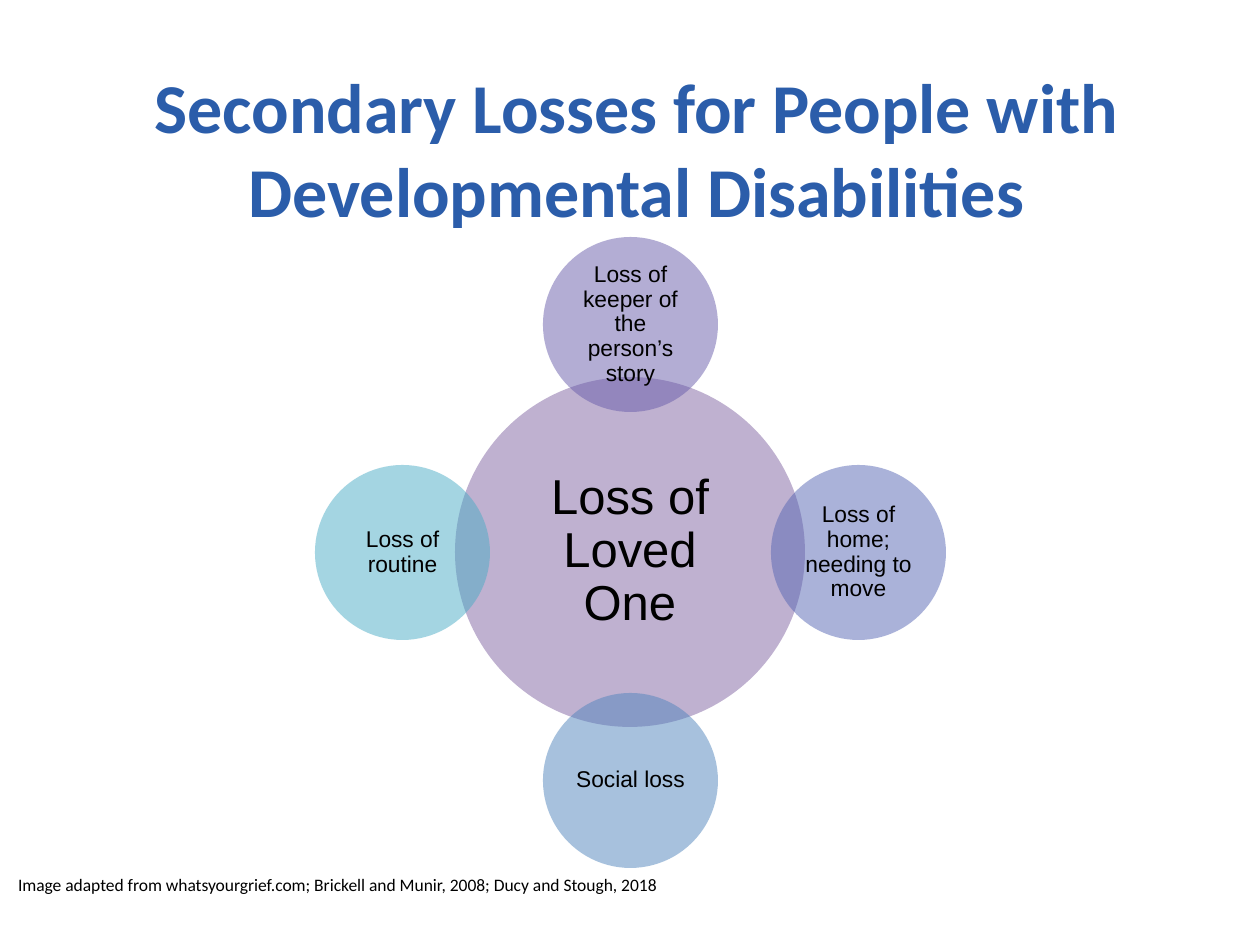
from lxml.etree import SubElement
from pptx import Presentation
from pptx.dml.color import RGBColor
from pptx.enum.shapes import MSO_SHAPE as SHAPE
from pptx.enum.text import MSO_ANCHOR as ANCHOR, MSO_AUTO_SIZE as AUTO, PP_ALIGN as ALIGN
from pptx.oxml.ns import qn
from pptx.util import Emu, Pt

PX = 914400 // 126
SLIDE_SIZE = 1260, 945
COLORS = {
    "title": "2B5DAA", "text": "000000", "loved one": "8064A2", "story": "685DAB",
    "home": "5767B4", "social": "5185BD", "routine": "4BACC6",
}
TITLE = "Secondary Losses for People with Developmental Disabilities"
SOURCE = "Image adapted from whatsyourgrief.com; Brickell and Munir, 2008; Ducy and Stough, 2018"
PRIMARY_LOSS = "Loss of Loved One"
SECONDARY_LOSSES = [  # text, color, direction from the center
    ("Loss of keeper of the person’s story", "story", (0, -1)),
    ("Loss of home; needing to move", "home", (1, 0)),
    ("Social loss", "social", (0, 1)),
    ("Loss of routine", "routine", (-1, 0)),
]
CENTER = 630, 552
PRIMARY_DIAMETER, SECONDARY_DIAMETER = 350, 175
ORBIT = 228


def emu(*lengths):
    return [Emu(length * PX) for length in lengths]


def write(shape, text, margin, frame_format, paragraph_format, font_format, color="text"):
    frame = shape.text_frame
    frame.word_wrap = True
    for side in ("left", "top", "right", "bottom"):
        setattr(frame, f"margin_{side}", Emu(margin * PX))
    paragraph = frame.paragraphs[0]
    paragraph.text = text
    font = paragraph.runs[0].font
    for target, values in ((frame, frame_format), (paragraph, paragraph_format),
                           (font, font_format)):
        for name, value in values.items():
            setattr(target, name, value)
    font.color.rgb = RGBColor.from_string(COLORS[color])


def add_loss(slide, text, color, center, diameter, size, margin):
    """Add a half-transparent circle with its text."""
    left, top = (middle - diameter // 2 for middle in center)
    circle = slide.shapes.add_shape(SHAPE.OVAL, *emu(left, top, diameter, diameter))
    circle.shadow.inherit = False
    circle.line.fill.background()
    circle.fill.solid()
    circle.fill.fore_color.rgb = RGBColor.from_string(COLORS[color])
    fill_color = circle.fill._xPr.find(qn("a:solidFill"))[0]
    SubElement(fill_color, qn("a:alpha"), val="50000")
    write(circle, text, margin, {"vertical_anchor": ANCHOR.MIDDLE},
          {"alignment": ALIGN.CENTER, "line_spacing": 0.9},
          {"name": "Arial", "size": Pt(size)})


def main():
    prs = Presentation()
    prs.slide_width, prs.slide_height = emu(*SLIDE_SIZE)
    slide = prs.slides.add_slide(prs.slide_layouts[6])

    title = slide.shapes.add_textbox(*emu(65, 58, 1143, 241))
    write(title, TITLE, 6, {"vertical_anchor": ANCHOR.TOP}, {"alignment": ALIGN.CENTER},
          {"name": "Calibri", "size": Pt(40), "bold": True}, "title")

    add_loss(slide, PRIMARY_LOSS, "loved one", CENTER, PRIMARY_DIAMETER, 28, 5)
    for text, color, direction in SECONDARY_LOSSES:
        center = [middle + ORBIT * step for middle, step in zip(CENTER, direction)]
        add_loss(slide, text, color, center, SECONDARY_DIAMETER, 13, 2)

    source = slide.shapes.add_textbox(*emu(12, 868, 867, 34))
    write(source, SOURCE, 6, {"auto_size": AUTO.SHAPE_TO_FIT_TEXT}, {},
          {"name": "Calibri", "size": Pt(10)})

    prs.save("out.pptx")


if __name__ == "__main__":
    main()
